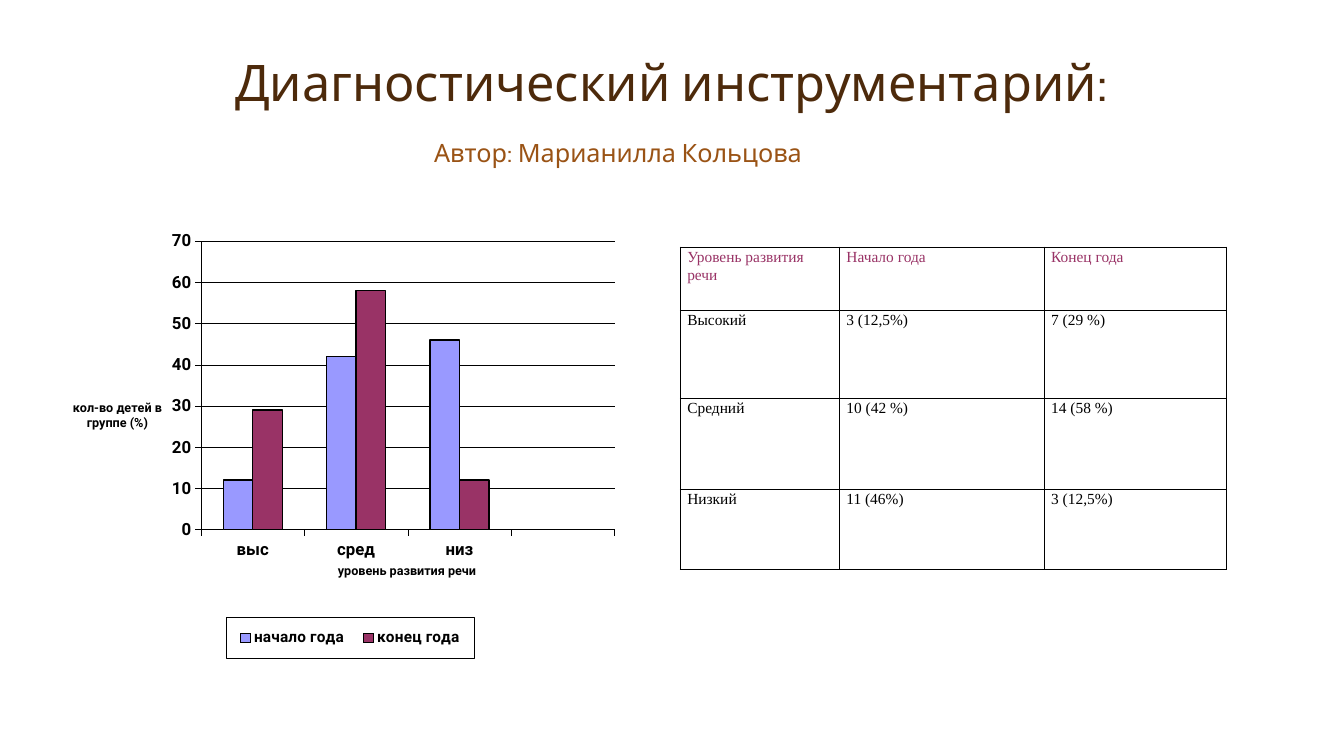
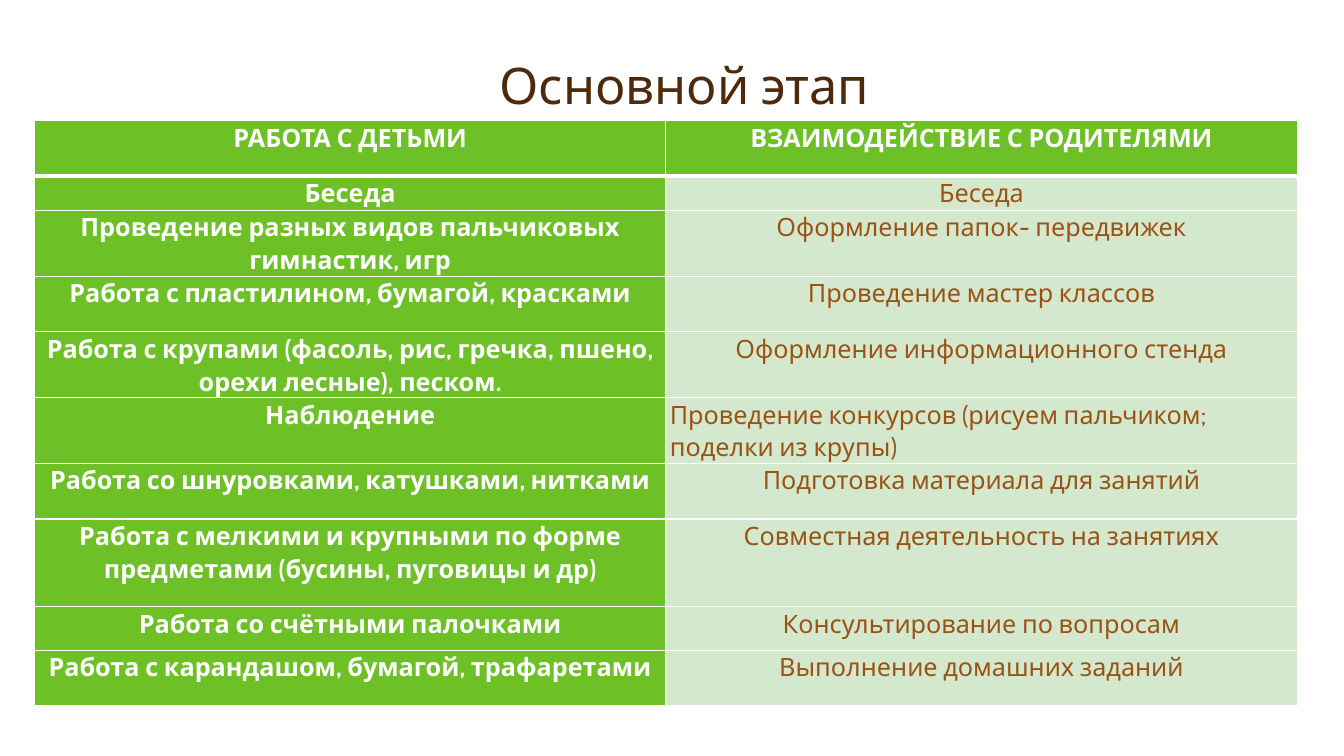
from dataclasses import dataclass
from typing import Optional

from lxml import etree
from pptx import Presentation
from pptx import util as u
from pptx.chart import data as chart_data
from pptx.dml import color
from pptx.enum import chart as chart_enum
from pptx.enum import text
from pptx.oxml import ns

# Shared look
BROWN_DARK, BROWN = "4D2A0B", "9A5315"
BLACK, WHITE = "000000", "FFFFFF"
GREEN, GREEN_PALE = "6DC025", "D4E8CD"
LILAC, PLUM = "9999FF", "993366"
TITLE_FONT, CHART_FONT, TABLE_FONT = "Cabin", "Roboto", "Times New Roman"
CENTER = text.PP_ALIGN.CENTER


@dataclass
class Box:
    left: float
    top: float
    width: float
    height: float

    def lengths(self) -> list:
        return [u.Cm(v) for v in (self.left, self.top, self.width, self.height)]


@dataclass
class TextStyle:
    font: str
    size: float
    color: str
    bold: bool = False
    align: Optional[text.PP_ALIGN] = None
    line_spacing: Optional[float] = None
    space_after: float = 0


@dataclass
class CellStyle:
    text: TextStyle
    margin: float
    border: str
    fill: Optional[str] = None
    bottom_width: float = 1


@dataclass
class Series:
    name: str
    values: tuple
    color: str


TITLE = TextStyle(TITLE_FONT, 36, BROWN_DARK, align=CENTER, line_spacing=0.9)
AUTHOR = TextStyle(TITLE_FONT, 18, BROWN)
PLAN_BOLD = TextStyle(TITLE_FONT, 18, WHITE, True, CENTER, 1.07)
PLAN_PLAIN = TextStyle(TITLE_FONT, 18, BROWN, False, CENTER, 1.07)
PLAN_LEFT = TextStyle(TITLE_FONT, 18, BROWN, line_spacing=1.07)

# Slide content
LEVELS = [
    ("Уровень развития речи", "Начало года", "Конец года"),
    ("Высокий", "3 (12,5%)", "7 (29 %)"),
    ("Средний", "10 (42 %)", "14 (58 %)"),
    ("Низкий", "11 (46%)", "3 (12,5%)"),
]
CATEGORIES = ("выс", "сред", "низ", "")
SERIES = [
    Series("начало года", (12, 42, 46, None), LILAC),
    Series("конец года", (29, 58, 12, None), PLUM),
]
CONTESTS = "Проведение конкурсов (рисуем пальчиком; поделки из крупы)"
PLAN = [
    ("РАБОТА С ДЕТЬМИ", "ВЗАИМОДЕЙСТВИЕ С РОДИТЕЛЯМИ"),
    ("Беседа", "Беседа"),
    ("Проведение разных видов пальчиковых гимнастик, игр",
     "Оформление папок- передвижек"),
    ("Работа с пластилином, бумагой, красками", "Проведение мастер классов"),
    ("Работа с крупами (фасоль, рис, гречка, пшено, орехи лесные), песком.",
     "Оформление информационного стенда"),
    ("Наблюдение", CONTESTS),
    ("Работа со шнуровками, катушками, нитками",
     "Подготовка материала для занятий"),
    ("Работа с мелкими и крупными по форме предметами (бусины, пуговицы и др)",
     "Совместная деятельность на занятиях"),
    ("Работа со счётными палочками", "Консультирование по вопросам"),
    ("Работа с карандашом, бумагой, трафаретами", "Выполнение домашних заданий"),
]


def rgb(value: str) -> color.RGBColor:
    return color.RGBColor.from_string(value)


# Text
def set_font(font, style: TextStyle) -> None:
    font.name = style.font
    font.size = u.Pt(style.size)
    font.bold = style.bold
    font.color.rgb = rgb(style.color)


def write(frame, words: str, style: TextStyle) -> None:
    frame.word_wrap = True
    paragraph = frame.paragraphs[0]
    paragraph.text = words
    paragraph.alignment = style.align
    paragraph.line_spacing = style.line_spacing
    paragraph.space_after = u.Pt(style.space_after)
    set_font(paragraph.font, style)


def add_text(slide, box: Box, words: str, style: TextStyle,
             anchor=text.MSO_ANCHOR.TOP) -> None:
    frame = slide.shapes.add_textbox(*box.lengths()).text_frame
    frame.vertical_anchor = anchor
    write(frame, words, style)


def add_titled_slide(presentation, title: str, box: Box):
    slide = presentation.slides.add_slide(presentation.slide_layouts[6])
    add_text(slide, box, title, TITLE, text.MSO_ANCHOR.BOTTOM)
    return slide


# Tables
def set_borders(cell, style: CellStyle) -> None:
    properties = cell._tc.get_or_add_tcPr()
    for index, side in enumerate(("lnL", "lnR", "lnT", "lnB")):
        width = style.bottom_width if side == "lnB" else 1
        line = etree.Element(ns.qn(f"a:{side}"), w=str(u.Pt(width)))
        fill = etree.SubElement(line, ns.qn("a:solidFill"))
        etree.SubElement(fill, ns.qn("a:srgbClr"), val=style.border)
        properties.insert(index, line)


def add_table(slide, left: float, top: float, widths: list, heights: list,
              rows: list, style_of) -> None:
    box = Box(left, top, sum(widths), sum(heights))
    table = slide.shapes.add_table(len(rows), len(widths), *box.lengths()).table
    table.first_row = table.horz_banding = False
    for column, width in zip(table.columns, widths):
        column.width = u.Cm(width)
    for r, (row, height) in enumerate(zip(rows, heights)):
        table.rows[r].height = u.Cm(height)
        for c, words in enumerate(row):
            cell, style = table.cell(r, c), style_of(r, c)
            cell.margin_left = cell.margin_right = u.Cm(style.margin)
            cell.margin_top = cell.margin_bottom = 0
            if style.fill:
                cell.fill.solid()
                cell.fill.fore_color.rgb = rgb(style.fill)
            else:
                cell.fill.background()
            set_borders(cell, style)
            write(cell.text_frame, words, style.text)


def level_style(row: int, column: int) -> CellStyle:
    ink = PLUM if row == 0 else BLACK
    words = TextStyle(TABLE_FONT, 11, ink, line_spacing=1.07, space_after=8)
    return CellStyle(words, 0.17, BLACK)


def plan_style(row: int, column: int) -> CellStyle:
    if row == 0:
        return CellStyle(PLAN_BOLD, 0.1, WHITE, GREEN, 3)
    if column == 0:
        return CellStyle(PLAN_BOLD, 0.1, WHITE, GREEN)
    words = PLAN_LEFT if PLAN[row][column] == CONTESTS else PLAN_PLAIN
    return CellStyle(words, 0.1, WHITE, GREEN_PALE)


# Chart
def set_layout(element, inner: bool = False, **percents: float) -> None:
    """Place a chart part by percentages of the chart area."""
    for old in element.findall(ns.qn("c:layout")):
        element.remove(old)
    layout = etree.Element(ns.qn("c:layout"))
    manual = etree.SubElement(layout, ns.qn("c:manualLayout"))
    settings = {"layoutTarget": "inner"} if inner else {}
    settings.update(xMode="edge", yMode="edge")
    settings.update({name: value / 100 for name, value in percents.items()})
    for name, value in settings.items():
        etree.SubElement(manual, ns.qn(f"c:{name}"), val=str(value))
    overlay = element.find(ns.qn("c:overlay"))
    if overlay is None:
        element.insert(0, layout)
    else:
        overlay.addprevious(layout)


def set_line(line, width: float) -> None:
    line.color.rgb = rgb(BLACK)
    line.width = u.Pt(width)


def style_axis(axis, title: str, x: float, y: float) -> None:
    axis.major_tick_mark = chart_enum.XL_TICK_MARK.OUTSIDE
    axis.minor_tick_mark = chart_enum.XL_TICK_MARK.NONE
    axis.tick_label_position = chart_enum.XL_TICK_LABEL_POSITION.LOW
    set_font(axis.tick_labels.font, TextStyle(CHART_FONT, 12, BLACK, True))
    set_line(axis.format.line, 0.25)
    write(axis.axis_title.text_frame, title,
          TextStyle(CHART_FONT, 9, BLACK, True, CENTER))
    element = axis.axis_title._element
    body = element.find(f".//{ns.qn('a:bodyPr')}")
    body.set("rot", "0")
    body.set("vert", "horz")
    set_layout(element, x=x, y=y)


def style_legend(chart) -> None:
    chart.has_legend = True
    legend = chart.legend
    legend.position = chart_enum.XL_LEGEND_POSITION.BOTTOM
    legend.include_in_layout = False
    set_font(legend.font, TextStyle(CHART_FONT, 11, BLACK, True))
    element = legend._element
    set_layout(element, x=28, y=90, w=44.3, h=9)
    frame = etree.Element(ns.qn("c:spPr"))
    line = etree.SubElement(frame, ns.qn("a:ln"), w=str(u.Pt(0.25)))
    fill = etree.SubElement(line, ns.qn("a:solidFill"))
    etree.SubElement(fill, ns.qn("a:srgbClr"), val=BLACK)
    element.find(ns.qn("c:overlay")).addnext(frame)


def add_level_chart(slide, box: Box) -> None:
    data = chart_data.CategoryChartData()
    data.categories = CATEGORIES
    for item in SERIES:
        data.add_series(item.name, item.values)
    kind = chart_enum.XL_CHART_TYPE.COLUMN_CLUSTERED
    chart = slide.shapes.add_chart(kind, *box.lengths(), data).chart
    chart.has_title = False
    set_font(chart.font, TextStyle(CHART_FONT, 12, BLACK, True))

    plot = chart.plots[0]
    plot.gap_width, plot.overlap = 150, 0
    plot.vary_by_categories = False
    for series, item in zip(plot.series, SERIES):
        series.format.fill.solid()
        series.format.fill.fore_color.rgb = rgb(item.color)
        set_line(series.format.line, 1)

    style_axis(chart.category_axis, "уровень развития речи", 47.5, 77.6)
    values = chart.value_axis
    style_axis(values, "кол-во детей в группе (%)", 0.2, 42.4)
    values.minimum_scale, values.maximum_scale, values.major_unit = 0, 70, 10
    values.has_major_gridlines = True
    set_line(values.major_gridlines.format.line, 0.25)
    style_legend(chart)
    plot_area = chart._chartSpace.find(f".//{ns.qn('c:plotArea')}")
    set_layout(plot_area, inner=True, x=23.5, y=8.6, w=73.8, h=62.5)


# Slides
def build_diagnostics(presentation) -> None:
    slide = add_titled_slide(presentation, "Диагностический инструментарий:",
                             Box(2.95, 0.84, 27.94, 2.13))
    add_table(slide, 17.15, 6.23, [4.01, 5.16, 4.59], [1.6, 2.21, 2.29, 2.03],
              LEVELS, level_style)
    add_level_chart(slide, Box(1.75, 5.08, 14.12, 11.63))
    add_text(slide, Box(10.69, 3.33, 10.82, 1.02), "Автор: Марианилла Кольцова",
             AUTHOR)


def build_main_stage(presentation) -> None:
    slide = add_titled_slide(presentation, "Основной этап",
                             Box(3.28, 0.93, 27.94, 2.11))
    heights = [1.4, 0.86, 1.66, 1.4, 1.66, 1.66, 1.4, 2.21, 1.1, 1.4]
    add_table(slide, 0.87, 3.04, [15.91, 15.91], heights, PLAN, plan_style)


def main() -> None:
    presentation = Presentation()
    presentation.slide_width, presentation.slide_height = u.Cm(33.87), u.Cm(19.05)
    build_diagnostics(presentation)
    build_main_stage(presentation)
    presentation.save("out.pptx")


if __name__ == "__main__":
    main()
